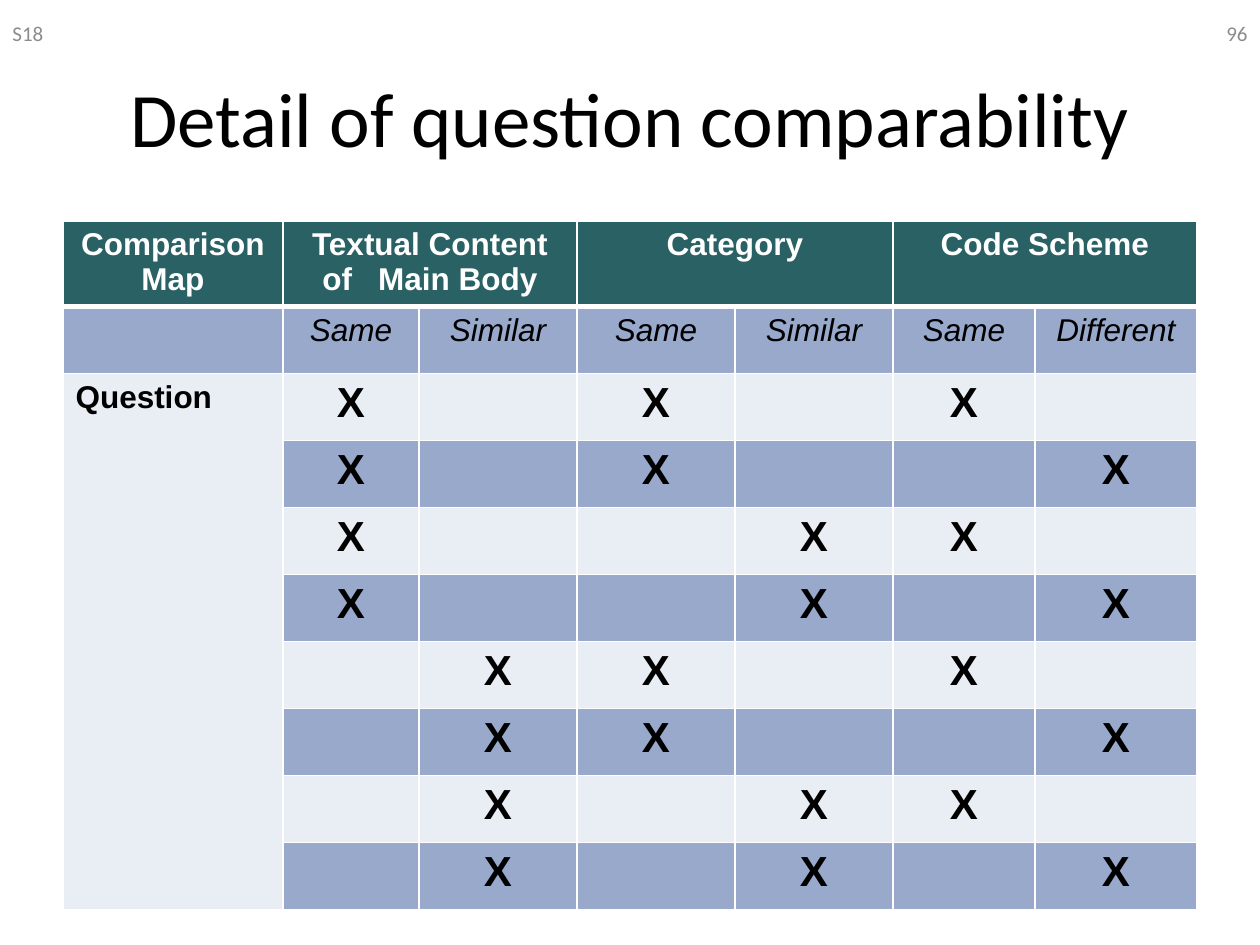
from lxml.etree import SubElement as Sub
from pptx import Presentation
from pptx.dml.color import RGBColor as RGB
from pptx.enum.text import MSO_ANCHOR as Anchor, PP_ALIGN as Align
from pptx.oxml.ns import qn
from pptx.util import Pt

PX = 914400 // 126  # EMU per px
COLORS = {"head": "296165", "dark": "98A9CC", "light": "E9EDF4",
          "white": "FFFFFF", "black": "000000", "gray": "8C8C8C"}

# Content: text, box, size, colour, alignment
LABELS = [
    ("Detail of question comparability", (63, 38, 1134, 158), 44, "black", Align.CENTER),
    ("S18", (0, 0, 294, 66), 12, "gray", Align.LEFT),
    ("96", (966, 0, 294, 66), 12, "gray", Align.RIGHT),
]
HEADS = ["Comparison Map", "Textual Content of   Main Body", "", "Category", "",
         "Code Scheme", ""]
KINDS = ["", "Same", "Similar", "Same", "Similar", "Same", "Different"]
MARKS = ["X-X-X-", "X-X--X", "X--XX-", "X--X-X",
         "-XX-X-", "-XX--X", "-X-XX-", "-X-X-X"]
ROWS = [HEADS, KINDS] + [
    ["" if i else "Question"] + [m.replace("-", "") for m in marks]
    for i, marks in enumerate(MARKS)]

# Table layout
LEFT, TOP = 63, 221
WIDTHS = [220, 136, 158, 158, 158, 142, 162]
HEAD_H, ROW_H = 82, 67
MERGES = [(0, 1, 0, 2), (0, 3, 0, 4), (0, 5, 0, 6), (2, 0, 9, 0)]


def color(name):
    return RGB.from_string(COLORS[name])


def write(frame, text, size, tint, align, face, bold=False, italic=False):
    para = frame.paragraphs[0]
    para.alignment = align
    run = para.add_run()
    run.text = text
    font = run.font
    font.name, font.size = face, Pt(size)
    font.bold, font.italic = bold, italic
    font.color.rgb = color(tint)


def border(cell, row):
    props = cell._tc.get_or_add_tcPr()
    wide = {"T": 3 if row == 1 else 1, "B": 3 if row == 0 else 1}
    for i, side in enumerate("LRTB"):
        line = Sub(props, qn("a:ln" + side), w=str(Pt(wide.get(side, 1))))
        fill = Sub(line, qn("a:solidFill"))
        Sub(fill, qn("a:srgbClr"), val=COLORS["white"])
        props.insert(i, line)


def style(row, col):
    """Size, colour, alignment, face, bold and italic of a cell."""
    if row == 0:
        return 18, "white", Align.CENTER, "Arial", True, False
    if row == 1:
        return 18, "black", Align.CENTER, "Arial", False, True
    if col == 0:
        return 18, "black", Align.LEFT, "Arial", True, False
    return 24, "black", Align.CENTER, "Arial", True, False


deck = Presentation()
deck.slide_width, deck.slide_height = 1260 * PX, 945 * PX
slide = deck.slides.add_slide(deck.slide_layouts[6])

# Title and page labels
for text, box, size, tint, align in LABELS:
    frame = slide.shapes.add_textbox(*(n * PX for n in box)).text_frame
    frame.word_wrap = True
    frame.vertical_anchor = Anchor.MIDDLE
    write(frame, text, size, tint, align, "Calibri")

# Comparison table
heights = [HEAD_H] + [ROW_H] * (len(ROWS) - 1)
table = slide.shapes.add_table(
    len(ROWS), len(WIDTHS), LEFT * PX, TOP * PX,
    sum(WIDTHS) * PX, sum(heights) * PX).table
for col, width in zip(table.columns, WIDTHS):
    col.width = width * PX
for row, height in zip(table.rows, heights):
    row.height = height * PX
for r1, c1, r2, c2 in MERGES:
    table.cell(r1, c1).merge(table.cell(r2, c2))

for r, texts in enumerate(ROWS):
    band = "head" if r == 0 else "dark" if r % 2 else "light"
    for c, text in enumerate(texts):
        cell = table.cell(r, c)
        cell.margin_top, cell.margin_bottom = 6 * PX, 4 * PX
        cell.fill.solid()
        cell.fill.fore_color.rgb = color(band)
        border(cell, r)
        if text:
            write(cell.text_frame, text, *style(r, c))

deck.save("out.pptx")
